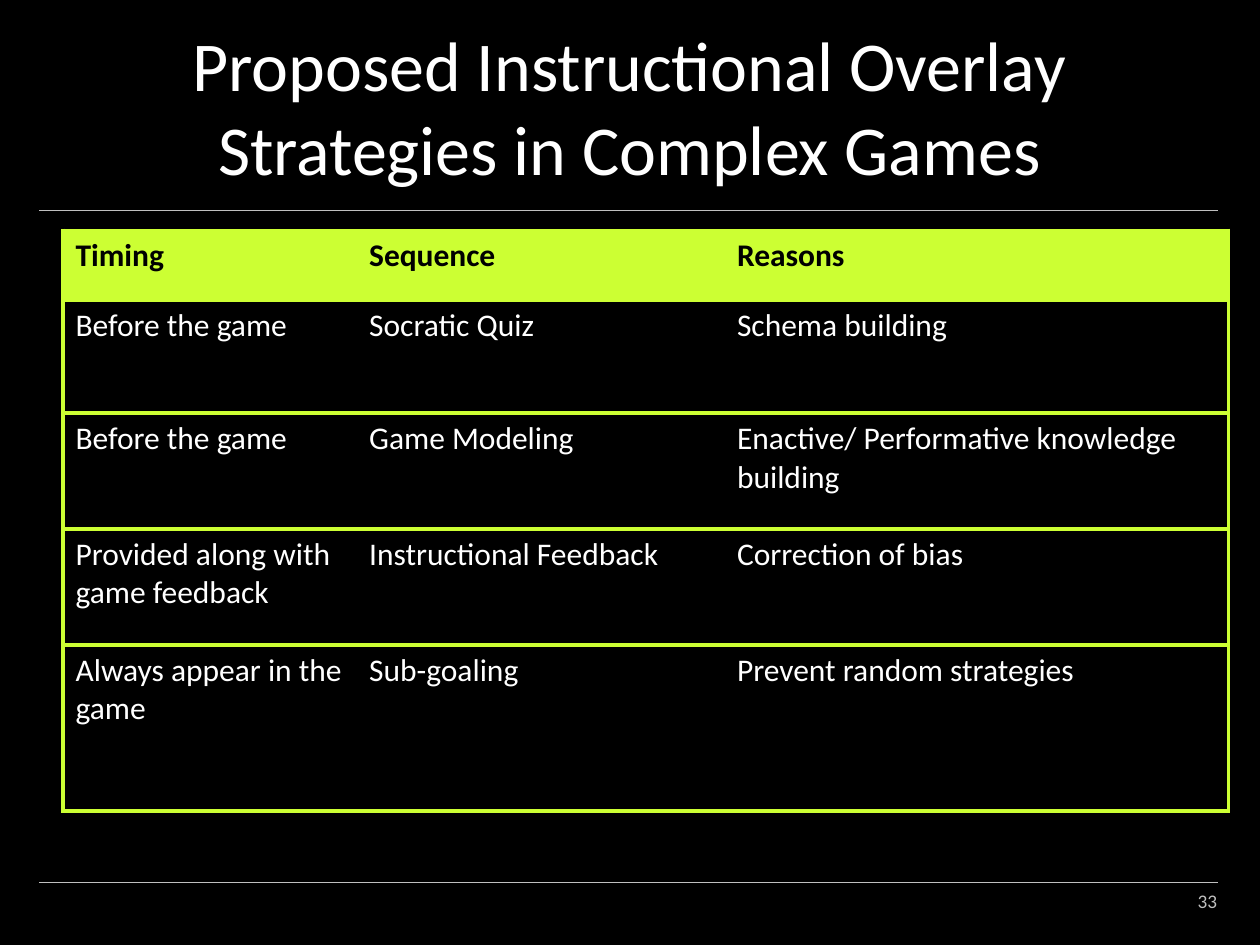
from pptx import Presentation
from pptx.dml.color import RGBColor
from pptx.enum.shapes import MSO_CONNECTOR as Connector
from pptx.enum.text import MSO_ANCHOR as Anchor, PP_ALIGN as Align
from pptx.util import Inches, Pt
from lxml.etree import SubElement
from pptx.oxml import parse_xml
from pptx.oxml.ns import nsdecls, qn

BLACK = RGBColor(0x00, 0x00, 0x00)
WHITE = RGBColor(0xFF, 0xFF, 0xFF)
GRAY = RGBColor(0xBF, 0xBF, 0xBF)
LIME = RGBColor(0xCC, 0xFF, 0x33)

COLUMN_WIDTHS = [2.33, 2.92, 4]
ROW_HEIGHTS = [0.55, 0.9, 0.92, 0.92, 1.32]
STRATEGIES = [
    ["Timing", "Sequence", "Reasons"],
    ["Before the game", "Socratic Quiz", "Schema building"],
    ["Before the game", "Game Modeling", "Enactive/ Performative knowledge building"],
    ["Provided along with game feedback", "Instructional Feedback", "Correction of bias"],
    ["Always appear in the game", "Sub-goaling", "Prevent random strategies"],
]


class SlideBuilder:
    font_name = "Calibri"
    border_width = Pt(2.5)

    def __init__(self, slide):
        self.slide = slide
        slide.background.fill.solid()
        slide.background.fill.fore_color.rgb = BLACK

    def style(self, paragraph, size, color, bold=False):
        font = paragraph.font
        font.name, font.size, font.bold = self.font_name, Pt(size), bold
        font.color.rgb = color

    def rule(self, left, right, top):
        line = self.slide.shapes.add_connector(
            Connector.STRAIGHT, Inches(left), Inches(top), Inches(right), Inches(top))
        line.line.color.rgb = GRAY
        line.line.width = Pt(0.25)
        SubElement(line._element.spPr, qn("a:effectLst"))

    def text(self, text, left, top, width, height, size, color, align, anchor, side_inset=0.1):
        box = self.slide.shapes.add_textbox(
            Inches(left), Inches(top), Inches(width), Inches(height))
        frame = box.text_frame
        frame.word_wrap = True
        frame.vertical_anchor = anchor
        frame.margin_left = frame.margin_right = Inches(side_inset)
        paragraph = frame.paragraphs[0]
        paragraph.text = text
        paragraph.alignment = align
        self.style(paragraph, size, color)

    def borders(self, cell, visible_sides):
        properties = cell._tc.get_or_add_tcPr()
        for index, side in enumerate("LRTB"):
            fill = "<a:noFill/>"
            if side in visible_sides:
                fill = f'<a:solidFill><a:srgbClr val="{LIME}"/></a:solidFill>'
            properties.insert(index, parse_xml(
                f'<a:ln{side} {nsdecls("a")} w="{self.border_width}">{fill}</a:ln{side}>'))

    def table(self, rows, left, top, widths, heights):
        table = self.slide.shapes.add_table(
            len(rows), len(widths), Inches(left), Inches(top),
            Inches(sum(widths)), Inches(sum(heights))).table
        for column, width in zip(table.columns, widths):
            column.width = Inches(width)
        for row, height in zip(table.rows, heights):
            row.height = Inches(height)
        for row_index, row in enumerate(rows):
            header = row_index == 0
            for column_index, text in enumerate(row):
                cell = table.cell(row_index, column_index)
                cell.text = text
                self.style(cell.text_frame.paragraphs[0], 18,
                           BLACK if header else WHITE, header)
                cell.fill.solid()
                cell.fill.fore_color.rgb = LIME if header else BLACK
                # Horizontal lines everywhere, vertical ones only outside
                sides = "TB"
                if column_index == 0:
                    sides += "L"
                if column_index == len(row) - 1:
                    sides += "R"
                self.borders(cell, sides)


def main():
    presentation = Presentation()
    presentation.slide_width = Inches(10)
    presentation.slide_height = Inches(7.5)
    builder = SlideBuilder(presentation.slides.add_slide(presentation.slide_layouts[6]))

    # Rules under the title and above the footer
    for top in (1.67, 7):
        builder.rule(0.31, 9.67, top)

    # Title and page number
    builder.text("Proposed Instructional Overlay Strategies in Complex Games",
                 0.7, 0.12, 8.59, 1.43, 40, WHITE, Align.CENTER, Anchor.BOTTOM)
    builder.text("33", 8.83, 6.95, 0.83, 0.4, 11, GRAY, Align.RIGHT, Anchor.MIDDLE, 0)

    # Strategy table
    builder.table(STRATEGIES, 0.5, 1.83, COLUMN_WIDTHS, ROW_HEIGHTS)

    presentation.save("out.pptx")


if __name__ == "__main__":
    main()
